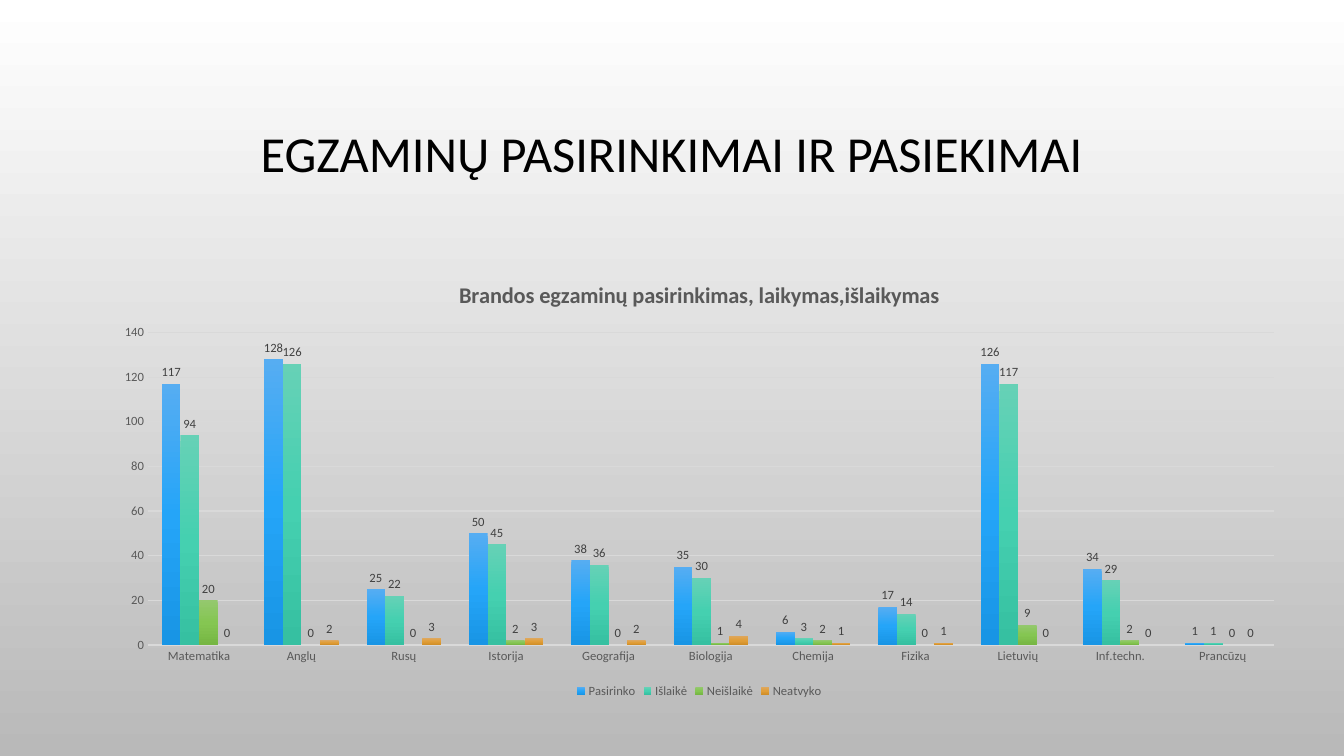
from dataclasses import dataclass

from lxml import etree
from pptx import Presentation
from pptx.chart.data import CategoryChartData
from pptx.dml.color import RGBColor
from pptx.enum.chart import XL_CHART_TYPE, XL_LABEL_POSITION, XL_LEGEND_POSITION, XL_TICK_MARK
from pptx.enum.text import MSO_ANCHOR, PP_ALIGN
from pptx.oxml.ns import qn
from pptx.util import Pt

COLUMN_CLUSTERED = XL_CHART_TYPE.COLUMN_CLUSTERED
OUTSIDE_END = XL_LABEL_POSITION.OUTSIDE_END
LEGEND_BOTTOM = XL_LEGEND_POSITION.BOTTOM
NO_TICK = XL_TICK_MARK.NONE
MIDDLE = MSO_ANCHOR.MIDDLE
CENTER = PP_ALIGN.CENTER

EMU_PER_PX = 9525
TITLE_ONLY_LAYOUT = 5
DOWNWARD = 270


@dataclass(frozen=True)
class Theme:
    font: str = "Calibri"
    title_size: int = 36
    chart_title_size: int = 16
    label_size: int = 9
    title_color: str = "000000"
    axis_color: str = "595959"
    label_color: str = "404040"
    line_color: str = "D9D9D9"
    background: tuple = ("FFFFFF", "B9B9B9")
    series: tuple = (
        ("56ADF2", "25A5F8", "1895E5"),
        ("66D1B6", "45D0B0", "36C0A1"),
        ("94C86E", "85C652", "76B643"),
        ("DEA75E", "E19E37", "D08E28"),
    )


THEME = Theme()

TITLE = "EGZAMINŲ PASIRINKIMAI IR PASIEKIMAI"
CHART_TITLE = "Brandos egzaminų pasirinkimas, laikymas,išlaikymas"
SUBJECTS = ("Matematika", "Anglų", "Rusų", "Istorija", "Geografija", "Biologija",
            "Chemija", "Fizika", "Lietuvių", "Inf.techn.", "Prancūzų")
RESULTS = {
    "Pasirinko": (117, 128, 25, 50, 38, 35, 6, 17, 126, 34, 1),
    "Išlaikė": (94, 126, 22, 45, 36, 30, 3, 14, 117, 29, 1),
    "Neišlaikė": (20, 0, 0, 2, 0, 1, 2, 0, 9, 2, 0),
    "Neatvyko": (0, 2, 3, 3, 2, 4, 1, 1, 0, 0, 0),
}


def px(*lengths):
    return [length * EMU_PER_PX for length in lengths]


def style_font(font, size, color, bold=False):
    font.name = THEME.font
    font.size = Pt(size)
    font.bold = bold
    font.color.rgb = RGBColor.from_string(color)


def style_line(line, width):
    line.color.rgb = RGBColor.from_string(THEME.line_color)
    line.width = Pt(width)


def fill_gradient(fill, owner, colors):
    """Fill from top to bottom with evenly spaced colours; owner is the XML holding the fill."""
    fill.gradient()
    fill.gradient_angle = DOWNWARD
    stops = next(owner.iter(qn("a:gsLst")))
    for stop in list(stops):
        stops.remove(stop)
    for index, color in enumerate(colors):
        position = 100000 * index // (len(colors) - 1)
        stop = etree.SubElement(stops, qn("a:gs"), pos=str(position))
        etree.SubElement(stop, qn("a:srgbClr"), val=color)


def set_title(slide):
    title = slide.shapes.title
    title.left, title.top, title.width, title.height = px(96, 65, 1088, 168)
    title.text_frame.text = TITLE
    title.text_frame.vertical_anchor = MIDDLE
    paragraph = title.text_frame.paragraphs[0]
    paragraph.alignment = CENTER
    paragraph.line_spacing = 0.9
    style_font(paragraph.runs[0].font, THEME.title_size, THEME.title_color)


def style_axes(chart):
    for axis in (chart.category_axis, chart.value_axis):
        axis.major_tick_mark = axis.minor_tick_mark = NO_TICK
        style_font(axis.tick_labels.font, THEME.label_size, THEME.axis_color)
    style_line(chart.category_axis.format.line, 1)
    chart.value_axis.format.line.fill.background()
    chart.value_axis.has_major_gridlines = True
    style_line(chart.value_axis.major_gridlines.format.line, 0.75)
    chart.value_axis.minimum_scale = 0
    chart.value_axis.maximum_scale = 140
    chart.value_axis.major_unit = 20


def style_columns(plot):
    plot.gap_width = 150
    plot.overlap = 0
    plot.vary_by_categories = False
    for series, colors in zip(plot.series, THEME.series):
        series.invert_if_negative = False
        fill_gradient(series.format.fill, series.format.element, colors)
        labels = series.data_labels
        labels.show_value = True
        labels.position = OUTSIDE_END
        style_font(labels.font, THEME.label_size, THEME.label_color)


def add_results_chart(slide):
    data = CategoryChartData()
    data.categories = SUBJECTS
    for name, values in RESULTS.items():
        data.add_series(name, values)
    chart = slide.shapes.add_chart(COLUMN_CLUSTERED, *px(96, 249, 1140, 420), data).chart
    style_font(chart.font, 10, THEME.title_color)

    chart.has_title = True
    chart.chart_title.text_frame.text = CHART_TITLE
    run = chart.chart_title.text_frame.paragraphs[0].runs[0]
    style_font(run.font, THEME.chart_title_size, THEME.axis_color, bold=True)

    chart.has_legend = True
    chart.legend.position = LEGEND_BOTTOM
    chart.legend.include_in_layout = False
    style_font(chart.legend.font, THEME.label_size, THEME.axis_color)

    style_axes(chart)
    style_columns(chart.plots[0])


def main():
    presentation = Presentation()
    presentation.slide_width, presentation.slide_height = px(1280, 720)
    slide = presentation.slides.add_slide(presentation.slide_layouts[TITLE_ONLY_LAYOUT])
    fill_gradient(slide.background.fill, slide.element, THEME.background)
    set_title(slide)
    add_results_chart(slide)
    presentation.save("out.pptx")


if __name__ == "__main__":
    main()
